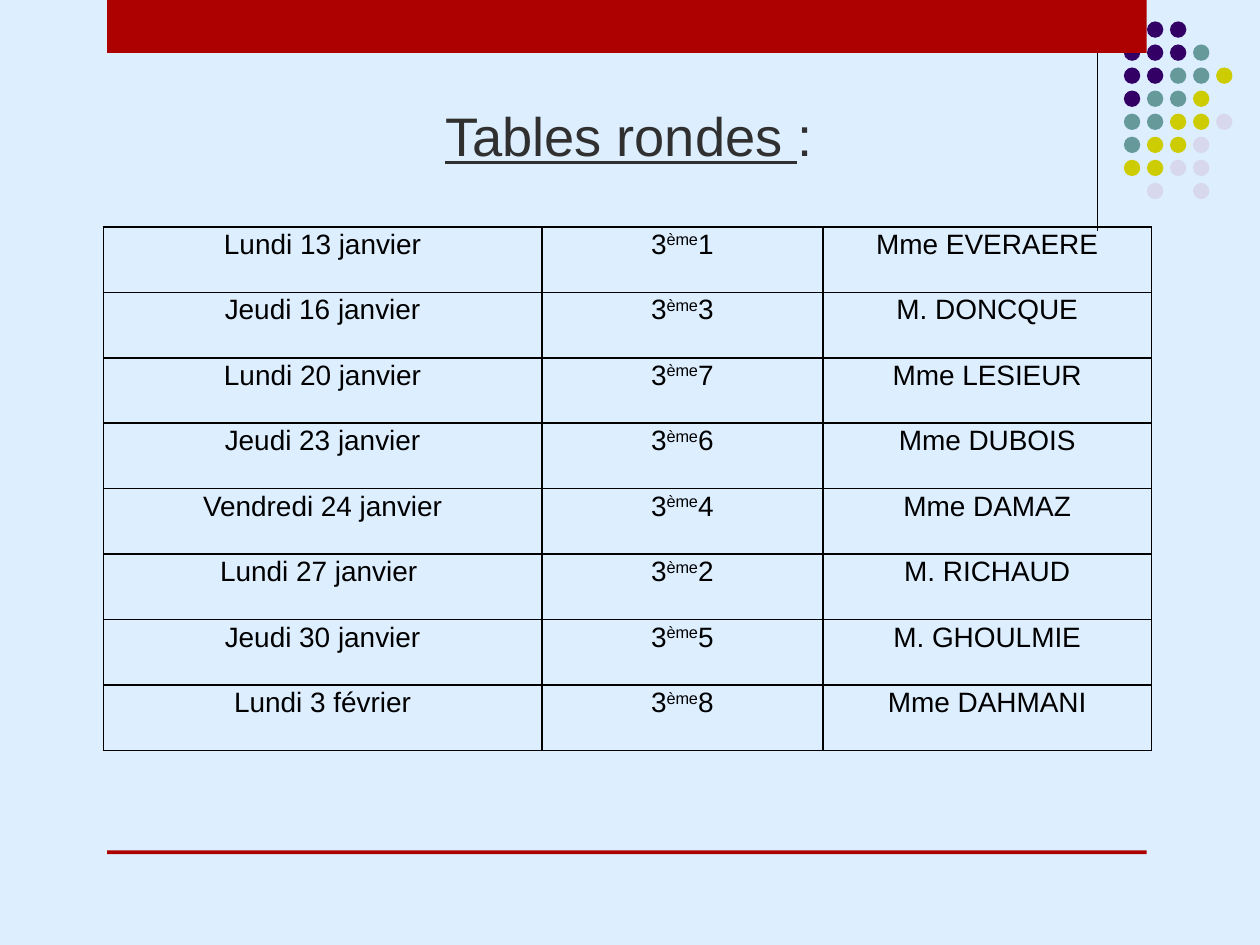
from lxml import etree
from pptx import Presentation
from pptx.dml.color import RGBColor
from pptx.enum.shapes import MSO_CONNECTOR, MSO_SHAPE
from pptx.enum.text import MSO_ANCHOR, MSO_AUTO_SIZE, PP_ALIGN
from pptx.oxml import parse_xml
from pptx.oxml.ns import nsdecls, qn
from pptx.util import Inches, Pt

RECTANGLE, ELLIPSE = MSO_SHAPE.RECTANGLE, MSO_SHAPE.OVAL
STRAIGHT = MSO_CONNECTOR.STRAIGHT
CENTER, TOP, NO_FIT = PP_ALIGN.CENTER, MSO_ANCHOR.TOP, MSO_AUTO_SIZE.NONE

BACKGROUND = RGBColor(0xDD, 0xEE, 0xFF)
BLACK = RGBColor(0, 0, 0)
TITLE_GRAY = RGBColor(0x30, 0x30, 0x30)
RED = RGBColor(0xAD, 0x01, 0x01)
DOT_COLORS = {
    "P": RGBColor(0x33, 0x00, 0x66),
    "T": RGBColor(0x66, 0x99, 0x99),
    "Y": RGBColor(0xCC, 0xCC, 0x00),
    "L": RGBColor(0xD8, 0xD8, 0xEC),
}
DOT_ROWS = [".PP", "PPPT", "PPTTY", "PTTY", "TTYYL", "TYYL", "YYLL", ".L.L"]
DOT_LEFT, DOT_TOP, DOT_SIZE, DOT_PITCH = 8.92, 0.17, 0.13, 0.183

FONT = "Arial"
COLUMN_WIDTHS = [3.48, 2.23, 2.61]
ROW_HEIGHT = 0.52
MEETINGS = [
    ("Lundi 13 janvier", "1", "Mme EVERAERE"),
    ("Jeudi 16 janvier", "3", "M. DONCQUE"),
    ("Lundi 20 janvier", "7", "Mme LESIEUR"),
    ("Jeudi 23 janvier", "6", "Mme DUBOIS"),
    ("Vendredi 24 janvier", "4", "Mme DAMAZ"),
    ("Lundi 27 janvier ", "2", "M. RICHAUD"),
    ("Jeudi 30 janvier", "5", "M. GHOULMIE"),
    ("Lundi 3 février", "8", "Mme DAHMANI"),
]


def add_filled_shape(page, kind, left, top, width, height, color):
    """Add a flat shape without outline."""
    shape = page.shapes.add_shape(
        kind, Inches(left), Inches(top), Inches(width), Inches(height))
    shape.shadow.inherit = False
    shape.fill.solid()
    shape.fill.fore_color.rgb = color
    shape.line.fill.background()


def add_vertical_line(page, left, top, bottom):
    """Add a thin black vertical line."""
    line = page.shapes.add_connector(
        STRAIGHT, Inches(left), Inches(top), Inches(left), Inches(bottom))
    line.line.color.rgb = BLACK
    line.line.width = Pt(0.75)
    etree.SubElement(line._element.spPr, qn("a:effectLst"))


def add_dots(page):
    """Add the coloured dots on their grid."""
    for row, pattern in enumerate(DOT_ROWS):
        for column, key in enumerate(pattern):
            if key in DOT_COLORS:
                add_filled_shape(
                    page, ELLIPSE, DOT_LEFT + column * DOT_PITCH,
                    DOT_TOP + row * DOT_PITCH, DOT_SIZE, DOT_SIZE, DOT_COLORS[key])


def add_span(para, text, size, color):
    """Append a formatted run and return it."""
    span = para.add_run()
    span.text = text
    span.font.name = FONT
    span.font.size = Pt(size)
    span.font.color.rgb = color
    return span


def set_title(page):
    """Place the title and underline its words."""
    box = page.shapes.title
    box.left, box.top = Inches(0.9), Inches(0.75)
    box.width, box.height = Inches(8.18), Inches(1.21)
    frame = box.text_frame
    frame.word_wrap = True
    frame.auto_size = NO_FIT
    frame.vertical_anchor = TOP
    frame.margin_left = frame.margin_right = frame.margin_bottom = Inches(0.05)
    frame.margin_top = Inches(0.12)
    para = frame.paragraphs[0]
    para.alignment = CENTER
    para.line_spacing = 0.9
    para.space_before = Pt(0)
    add_span(para, "Tables rondes ", 31, TITLE_GRAY).font.underline = True
    add_span(para, ":", 31, TITLE_GRAY)


def set_borders(cell):
    """Give a cell thin black borders on all sides."""
    properties = cell._tc.get_or_add_tcPr()
    for index, side in enumerate(("lnL", "lnR", "lnT", "lnB")):
        properties.insert(index, parse_xml(
            f'<a:{side} {nsdecls("a")} w="{Pt(1)}"><a:solidFill>'
            f'<a:srgbClr val="{BLACK}"/></a:solidFill></a:{side}>'))


def fill_cell(cell, texts):
    """Write the texts in a cell, raising the second one."""
    cell.fill.background()
    set_borders(cell)
    cell.vertical_anchor = TOP
    cell.margin_left = cell.margin_right = Inches(0.07)
    cell.margin_top = cell.margin_bottom = 0
    para = cell.text_frame.paragraphs[0]
    para.alignment = CENTER
    para.line_spacing = 1.07
    para.space_after = Pt(8)
    for index, text in enumerate(texts):
        span = add_span(para, text, 16, BLACK)
        if index == 1:
            span._r.get_or_add_rPr().set("baseline", "30000")


def add_schedule(page):
    """Add the table of dates, classes and teachers."""
    table = page.shapes.add_table(
        len(MEETINGS), len(COLUMN_WIDTHS), Inches(0.82), Inches(1.8),
        Inches(sum(COLUMN_WIDTHS)), Inches(ROW_HEIGHT * len(MEETINGS))).table
    table.first_row = table.horz_banding = False
    for column, width in zip(table.columns, COLUMN_WIDTHS):
        column.width = Inches(width)
    for row, (date, group, teacher) in zip(table.rows, MEETINGS):
        row.height = Inches(ROW_HEIGHT)
        contents = [[date], ["3", "ème", group], [teacher]]
        for cell, texts in zip(row.cells, contents):
            fill_cell(cell, texts)


def main():
    """Build and save the slide."""
    deck = Presentation()
    deck.slide_width, deck.slide_height = Inches(10), Inches(7.5)
    page = deck.slides.add_slide(deck.slide_layouts[5])
    page.background.fill.solid()
    page.background.fill.fore_color.rgb = BACKGROUND
    add_vertical_line(page, 8.71, 0.17, 1.83)
    add_dots(page)
    add_filled_shape(page, RECTANGLE, 0.85, 0, 8.25, 0.42, RED)
    add_filled_shape(page, RECTANGLE, 0.85, 6.75, 8.25, 0.03, RED)
    set_title(page)
    add_schedule(page)
    deck.save("out.pptx")


if __name__ == "__main__":
    main()
